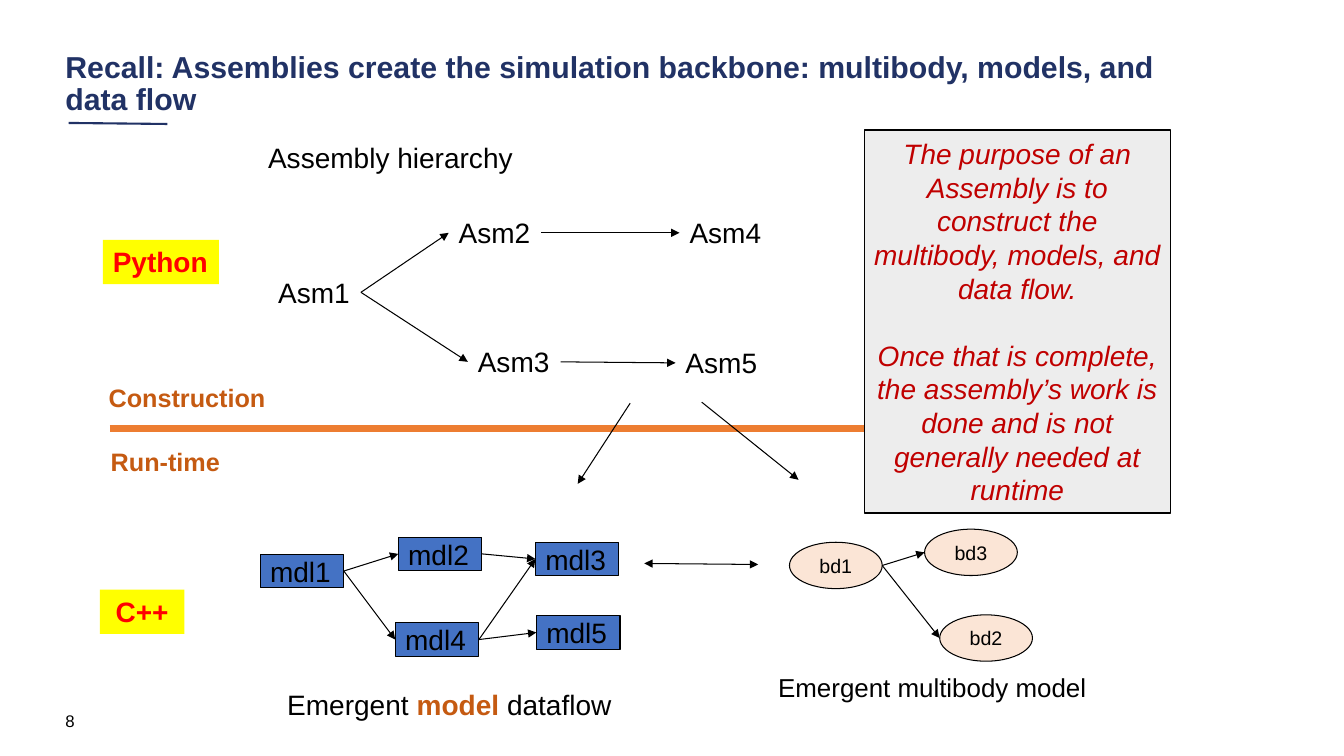
from dataclasses import dataclass

from lxml import etree
from pptx import Presentation
from pptx import util as u
from pptx.dml.color import RGBColor
from pptx.enum import shapes, text
from pptx.oxml.ns import qn

BLACK, NAVY, ORANGE, RUST = "000000", "213265", "ED7D31", "C55A11"
RED, CRIMSON, YELLOW, BLUE = "FF0000", "C00000", "FFFF00", "4472C4"
PEACH, GREY = "FBE5D6", "EDEDED"
RIGHT, LEFT = 3, 1
RECTANGLE, OVAL = shapes.MSO_SHAPE.RECTANGLE, shapes.MSO_SHAPE.OVAL
CENTER = text.PP_ALIGN.CENTER
MIDDLE, TOP = text.MSO_ANCHOR.MIDDLE, text.MSO_ANCHOR.TOP


@dataclass(frozen=True)
class Run:
    words: str
    color: str = BLACK
    bold: bool = False
    italic: bool = False


@dataclass(frozen=True)
class Box:
    """A text box, or a preset shape when a fill is given."""
    left: float
    top: float
    width: float
    height: float
    paragraphs: tuple[tuple[Run, ...], ...]
    size: float = 20
    fill: str | None = None
    outline: bool = False
    preset: shapes.MSO_SHAPE = RECTANGLE
    align: text.PP_ALIGN = text.PP_ALIGN.LEFT
    anchor: text.MSO_ANCHOR = TOP
    wrap: bool = False
    grow: bool = False
    line_spacing: float = 1.0
    gap: float = 0


@dataclass(frozen=True)
class Line:
    start: tuple[float, float]
    end: tuple[float, float]
    color: str = BLACK
    width: float = 0.75
    heads: tuple[str, ...] = ("tailEnd",)


def rgb(color: str) -> RGBColor:
    return RGBColor.from_string(color)


def one(words: str, color: str = BLACK, bold: bool = False,
        italic: bool = False) -> tuple[tuple[Run, ...], ...]:
    """Text made of one paragraph with one run."""
    return ((Run(words, color, bold, italic),),)


def draw_box(slide, box: Box):
    area = [u.Inches(v) for v in (box.left, box.top, box.width, box.height)]
    if box.fill:
        shape = slide.shapes.add_shape(box.preset, *area)
        shape.shadow.inherit = False
        shape.fill.solid()
        shape.fill.fore_color.rgb = rgb(box.fill)
        if box.outline:
            shape.line.color.rgb = rgb(BLACK)
            shape.line.width = u.Pt(0.75)
        else:
            shape.line.fill.background()
    else:
        shape = slide.shapes.add_textbox(*area)
    frame = shape.text_frame
    frame.word_wrap = box.wrap
    frame.vertical_anchor = box.anchor
    frame.auto_size = (text.MSO_AUTO_SIZE.SHAPE_TO_FIT_TEXT if box.grow
                       else text.MSO_AUTO_SIZE.NONE)
    for index, runs in enumerate(box.paragraphs):
        paragraph = frame.add_paragraph() if index else frame.paragraphs[0]
        paragraph.alignment = box.align
        paragraph.line_spacing = box.line_spacing
        if index:
            paragraph.space_before = u.Pt(box.gap)
        for item in runs:
            run = paragraph.add_run()
            run.text = item.words
            run.font.name = "Arial"
            run.font.size = u.Pt(box.size)
            run.font.bold = item.bold
            run.font.italic = item.italic
            run.font.color.rgb = rgb(item.color)
    return shape


def draw_line(slide, line: Line):
    connector = slide.shapes.add_connector(
        shapes.MSO_CONNECTOR.STRAIGHT,
        *(u.Inches(v) for v in (*line.start, *line.end)))
    connector.line.color.rgb = rgb(line.color)
    connector.line.width = u.Pt(line.width)
    outline = connector.line._get_or_add_ln()
    for head in line.heads:
        etree.SubElement(outline, qn("a:" + head), type="triangle")
    etree.SubElement(connector._element.spPr, qn("a:effectLst"))
    return connector


def assembly(name: str, left: float, top: float) -> Box:
    return Box(left, top, 0.92, 0.44, one(name), grow=True)


def model(name: str, left: float, top: float) -> Box:
    return Box(left, top, 0.83, 0.33, one(name), fill=BLUE, outline=True,
               anchor=MIDDLE)


def body(name: str, left: float, top: float) -> Box:
    return Box(left, top, 0.92, 0.46, one(name), size=14, fill=PEACH,
               outline=True, preset=OVAL, align=CENTER, anchor=MIDDLE)


NODES = [
    assembly("Asm1", 2.66, 2.68), assembly("Asm2", 4.45, 2.09),
    assembly("Asm3", 4.64, 3.37), assembly("Asm4", 6.74, 2.09),
    assembly("Asm5", 6.7, 3.38),
    model("mdl1", 2.58, 5.5), model("mdl2", 3.95, 5.33),
    model("mdl3", 5.31, 5.38), model("mdl4", 3.92, 6.18),
    model("mdl5", 5.32, 6.11),
    body("bd1", 7.83, 5.38), body("bd2", 9.32, 6.1), body("bd3", 9.17, 5.25),
]
LINKS = [
    ("Asm1", "Asm2"), ("Asm1", "Asm3"), ("Asm2", "Asm4"), ("Asm3", "Asm5"),
    ("mdl1", "mdl2"), ("mdl1", "mdl4"), ("mdl4", "mdl3"), ("mdl4", "mdl5"),
    ("mdl2", "mdl3"), ("bd1", "bd3"), ("bd1", "bd2"),
]
LINES = [
    Line((0.68, 1.22), (1.66, 1.23), NAVY, 1.5, ()),
    Line((1.09, 4.25), (10.08, 4.25), ORANGE, 4.5, ()),
    Line((6.39, 5.59), (7.52, 5.6), heads=("headEnd", "tailEnd")),
    Line((6.25, 4), (5.73, 4.8)),
    Line((6.96, 3.99), (7.92, 4.76)),
]
LABELS = [
    Box(0.55, 0.46, 11.12, 0.76,
        one("Recall: Assemblies create the simulation backbone: multibody, "
            "models, and data flow", NAVY, bold=True),
        size=21.6, anchor=MIDDLE, wrap=True, line_spacing=0.9),
    Box(0.55, 6.95, 3, 0.4, one("8"), size=12, anchor=MIDDLE, wrap=True),
    Box(2.56, 1.34, 2.65, 0.44, one("Assembly hierarchy"), grow=True),
    Box(7.62, 6.67, 3.84, 0.5, one("Emergent multibody model"), size=18.5,
        wrap=True, line_spacing=0.8),
    Box(2.75, 6.77, 3.64, 0.5,
        ((Run("Emergent "), Run("model", RUST, bold=True), Run(" dataflow")),),
        wrap=True),
    Box(1, 4.38, 1.3, 0.4, one("Run-time", RUST, bold=True), size=18,
        grow=True),
    Box(0.98, 3.74, 1.77, 0.4, one("Construction", RUST, bold=True), size=18,
        grow=True),
    Box(8.57, 1.29, 3.04, 3.8,
        one("The purpose of an Assembly is to construct the multibody, "
            "models, and data flow.", CRIMSON, italic=True)
        + one("Once that is complete, the assembly’s work is done and is not "
              "generally needed at runtime", CRIMSON, italic=True),
        fill=GREY, outline=True, align=CENTER, anchor=MIDDLE, wrap=True,
        grow=True, gap=24),
    Box(1.02, 2.38, 1.15, 0.44, one("Python", RED, bold=True), fill=YELLOW,
        grow=True),
    Box(0.99, 5.85, 0.84, 0.44, one("C++", RED, bold=True), fill=YELLOW,
        align=CENTER, wrap=True, grow=True),
]


def draw_link(slide, source: Box, target: Box, source_shape, target_shape):
    """Arrow from the source's right side to the target's left side."""
    start = (source.left + source.width, source.top + source.height / 2)
    end = (target.left, target.top + target.height / 2)
    connector = draw_line(slide, Line(start, end))
    if source.preset == RECTANGLE:
        connector.begin_connect(source_shape, RIGHT)
        connector.end_connect(target_shape, LEFT)


def main() -> None:
    presentation = Presentation()
    presentation.slide_width = u.Inches(13.33)
    presentation.slide_height = u.Inches(7.5)
    slide = presentation.slides.add_slide(presentation.slide_layouts[6])
    for line in LINES:
        draw_line(slide, line)
    drawn = {node.paragraphs[0][0].words: (node, draw_box(slide, node))
             for node in NODES}
    for source_name, target_name in LINKS:
        source, source_shape = drawn[source_name]
        target, target_shape = drawn[target_name]
        draw_link(slide, source, target, source_shape, target_shape)
    for label in LABELS:
        draw_box(slide, label)
    presentation.save("out.pptx")


if __name__ == "__main__":
    main()
